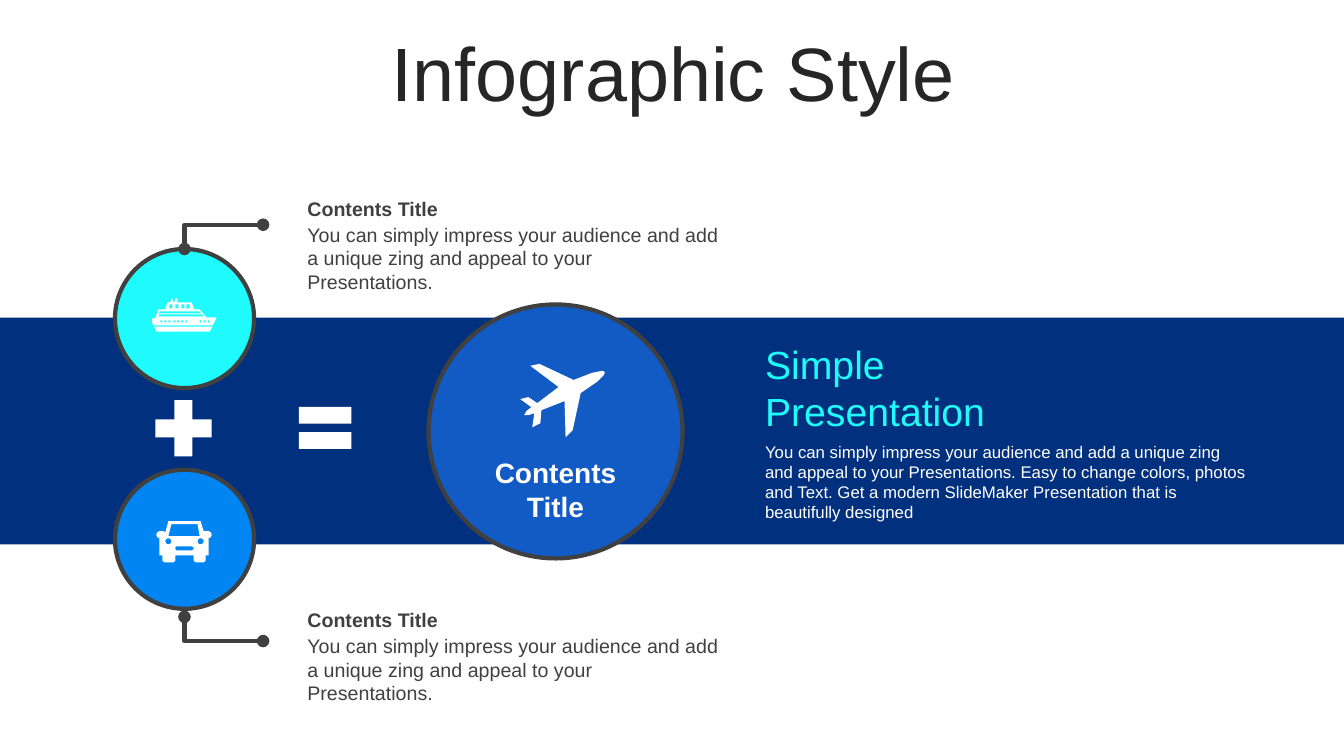
from dataclasses import dataclass
from math import cos, pi, sin

from lxml import etree
from pptx import Presentation
from pptx.dml.color import RGBColor
from pptx.enum.shapes import MSO_CONNECTOR, MSO_SHAPE
from pptx.enum.text import MSO_ANCHOR, MSO_AUTO_SIZE, PP_ALIGN
from pptx.oxml.ns import qn
from pptx.slide import Slide
from pptx.text.text import TextFrame
from pptx.util import Emu, Pt

PX = 9144
WIDE, HIGH = 1333, 750
FONT = "Arial"

RECT, OVAL = MSO_SHAPE.RECTANGLE, MSO_SHAPE.OVAL
PLUS, EQUAL = MSO_SHAPE.MATH_PLUS, MSO_SHAPE.MATH_EQUAL
ELBOW = MSO_CONNECTOR.ELBOW
LEFT, CENTER = PP_ALIGN.LEFT, PP_ALIGN.CENTER
MIDDLE = MSO_ANCHOR.MIDDLE
FIXED = MSO_AUTO_SIZE.NONE

INK = RGBColor(0x26, 0x26, 0x26)
GRAY = RGBColor(0x40, 0x40, 0x40)
WHITE = RGBColor(0xFF, 0xFF, 0xFF)
NAVY = RGBColor(0x00, 0x30, 0x7E)
CYAN = RGBColor(0x1F, 0xFB, 0xFD)
AZURE = RGBColor(0x00, 0x85, 0xF2)
BLUE = RGBColor(0x12, 0x5A, 0xC4)

Box = tuple[int, int, int, int]
Loop = list[tuple[float, float]]


@dataclass
class Block:
    kind: int
    box: Box
    fill: RGBColor
    edged: bool = False


@dataclass
class Label:
    text: str
    box: Box
    size: int
    color: RGBColor
    bold: bool = False
    align: int = LEFT


@dataclass
class Note:
    top: int
    bend: int
    end: int


SHORT = "You can simply impress your audience and add a unique zing and appeal to your Presentations."
LONG = ("You can simply impress your audience and add a unique zing and appeal to your "
        "Presentations. Easy to change colors, photos and Text. Get a modern SlideMaker "
        "Presentation that is beautifully designed")

BLOCKS = [
    Block(RECT, (0, 315, WIDE, 225), NAVY),
    Block(OVAL, (114, 247, 138, 138), CYAN, True),
    Block(OVAL, (114, 466, 138, 138), AZURE, True),
    Block(PLUS, (144, 387, 76, 76), WHITE),
    Block(OVAL, (425, 302, 252, 252), BLUE, True),
    Block(EQUAL, (287, 389, 71, 71), WHITE),
]
LABELS = [
    Label("Simple\nPresentation", (749, 333, 500, 104), 28, CYAN),
    Label(LONG, (749, 433, 500, 91), 12, WHITE),
    Label("Contents\nTitle", (425, 447, 252, 77), 20, WHITE, True, CENTER),
]
NOTES = [Note(190, 223, 247), Note(598, 636, 612)]


def pane(left: int, top: int, width: int, height: int) -> Loop:
    right, base = left + width, top + height
    return [(left, top), (left, base), (right, base), (right, top)]


def ring(x: int, y: int, size: int) -> Loop:
    return [(x + size * cos(k * pi / 8), y + size * sin(k * pi / 8)) for k in range(16)]


CAR = [
    [(167, 517), (199, 517), (202, 527), (207, 527), (209, 528), (210, 530),
     (210, 531), (209, 533), (207, 534), (207, 551), (204, 551), (204, 556),
     (202, 558), (194, 558), (192, 556), (192, 551), (174, 551), (174, 556),
     (172, 558), (163, 558), (161, 556), (161, 551), (158, 551), (158, 534),
     (156, 533), (155, 531), (155, 530), (156, 528), (158, 527), (162, 527), (164, 528)],
    [(170, 520), (167, 532), (198, 532), (196, 520)],
    [(175, 542), (174, 543), (174, 545), (175, 546), (190, 546),
     (192, 545), (192, 543), (190, 542)],
    ring(167, 537, 3),
    ring(199, 537, 3),
]
SHIP = [
    [(174, 296), (176, 296), (176, 300), (190, 300), (193, 307), (198, 307),
     (205, 315), (215, 315), (211, 323), (152, 323), (151, 320), (151, 316),
     (154, 316), (157, 307), (164, 307), (166, 300), (169, 300), (170, 296),
     (171, 296), (172, 300), (173, 300)],
    [(153, 324), (211, 324), (208, 329), (155, 329)],
    [(158, 312), (157, 314), (202, 314), (201, 312)],
    [(158, 309), (158, 311), (200, 311), (198, 309)],
    *[pane(x, 318, 2, 2) for x in (159, 163, 167, 172, 176, 180, 184, 198, 202, 206)],
    *[pane(x, 302, 3, 4) for x in (168, 174, 180, 185)],
]
PLANE = [
    [(528, 424), (530, 410), (524, 412), (520, 412), (522, 408), (527, 404),
     (516, 396), (524, 394), (533, 400), (554, 384), (526, 363), (535, 361),
     (569, 377), (587, 370), (597, 368), (600, 369), (599, 372), (592, 379),
     (576, 390), (568, 427), (561, 434), (560, 398), (537, 407), (536, 420)],
]


def scale(box: Box) -> list[Emu]:
    return [Emu(n * PX) for n in box]


def style(frame: TextFrame, size: int, color: RGBColor, bold: bool, align: int) -> None:
    for para in frame.paragraphs:
        para.alignment = align
        for run in para.runs:
            run.font.name = FONT
            run.font.size = Pt(size)
            run.font.bold = bold
            run.font.color.rgb = color


def head(slide: Slide) -> None:
    title = slide.shapes.title
    title.left, title.top, title.width, title.height = scale((35, 37, 1266, 79))
    frame = title.text_frame
    frame.text = "Infographic Style"
    frame.auto_size = FIXED
    frame.vertical_anchor = MIDDLE
    frame.paragraphs[0].line_spacing = 0.9
    style(frame, 54, INK, False, CENTER)


def block(slide: Slide, item: Block) -> None:
    shape = slide.shapes.add_shape(item.kind, *scale(item.box))
    shape.shadow.inherit = False
    shape.fill.solid()
    shape.fill.fore_color.rgb = item.fill
    if item.edged:
        shape.line.color.rgb = GRAY
        shape.line.width = Pt(3)
    else:
        shape.line.fill.background()


def label(slide: Slide, item: Label) -> None:
    frame = slide.shapes.add_textbox(*scale(item.box)).text_frame
    frame.word_wrap = True
    frame.text = item.text
    style(frame, item.size, item.color, item.bold, item.align)


def note(slide: Slide, item: Note) -> None:
    label(slide, Label(SHORT, (295, item.top + 26, 429, 57), 14, GRAY))
    label(slide, Label("Contents Title", (295, item.top, 429, 34), 14, GRAY, True))
    wire = slide.shapes.add_connector(ELBOW, *scale((261, item.bend, 183, item.end)))
    wire.line.color.rgb = GRAY
    wire.line.width = Pt(3)
    props = wire._element.spPr
    props.find(qn("a:prstGeom")).set("prst", "bentConnector2")
    edge = props.find(qn("a:ln"))
    for tag in ("a:headEnd", "a:tailEnd"):
        etree.SubElement(edge, qn(tag), type="oval")
    etree.SubElement(props, qn("a:effectLst"))


def icon(slide: Slide, loops: list[Loop]) -> None:
    paths = [[(x * PX, y * PX) for x, y in loop] for loop in loops]
    pen = slide.shapes.build_freeform(*paths[0][0])
    pen.add_line_segments(paths[0][1:])
    for path in paths[1:]:
        pen.move_to(*path[0])
        pen.add_line_segments(path[1:])
    shape = pen.convert_to_shape()
    shape.shadow.inherit = False
    shape.fill.solid()
    shape.fill.fore_color.rgb = WHITE
    shape.line.fill.background()


def main() -> None:
    deck = Presentation()
    deck.slide_width, deck.slide_height = Emu(WIDE * PX), Emu(HIGH * PX)
    slide = deck.slides.add_slide(deck.slide_layouts[5])
    head(slide)
    for item in BLOCKS:
        block(slide, item)
    for item in LABELS:
        label(slide, item)
    for item in NOTES:
        note(slide, item)
    for loops in (CAR, SHIP, PLANE):
        icon(slide, loops)
    deck.save("out.pptx")


if __name__ == "__main__":
    main()
